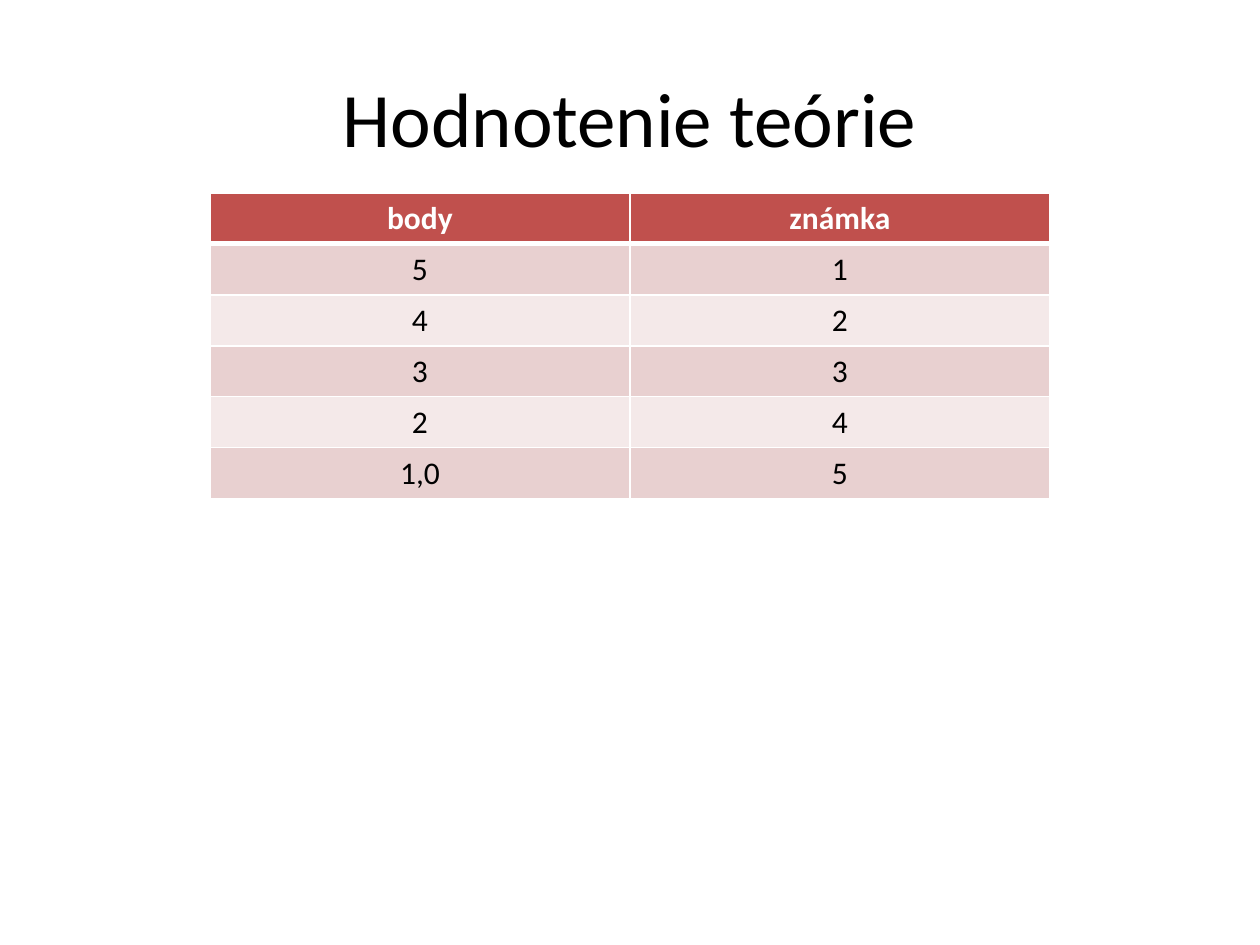
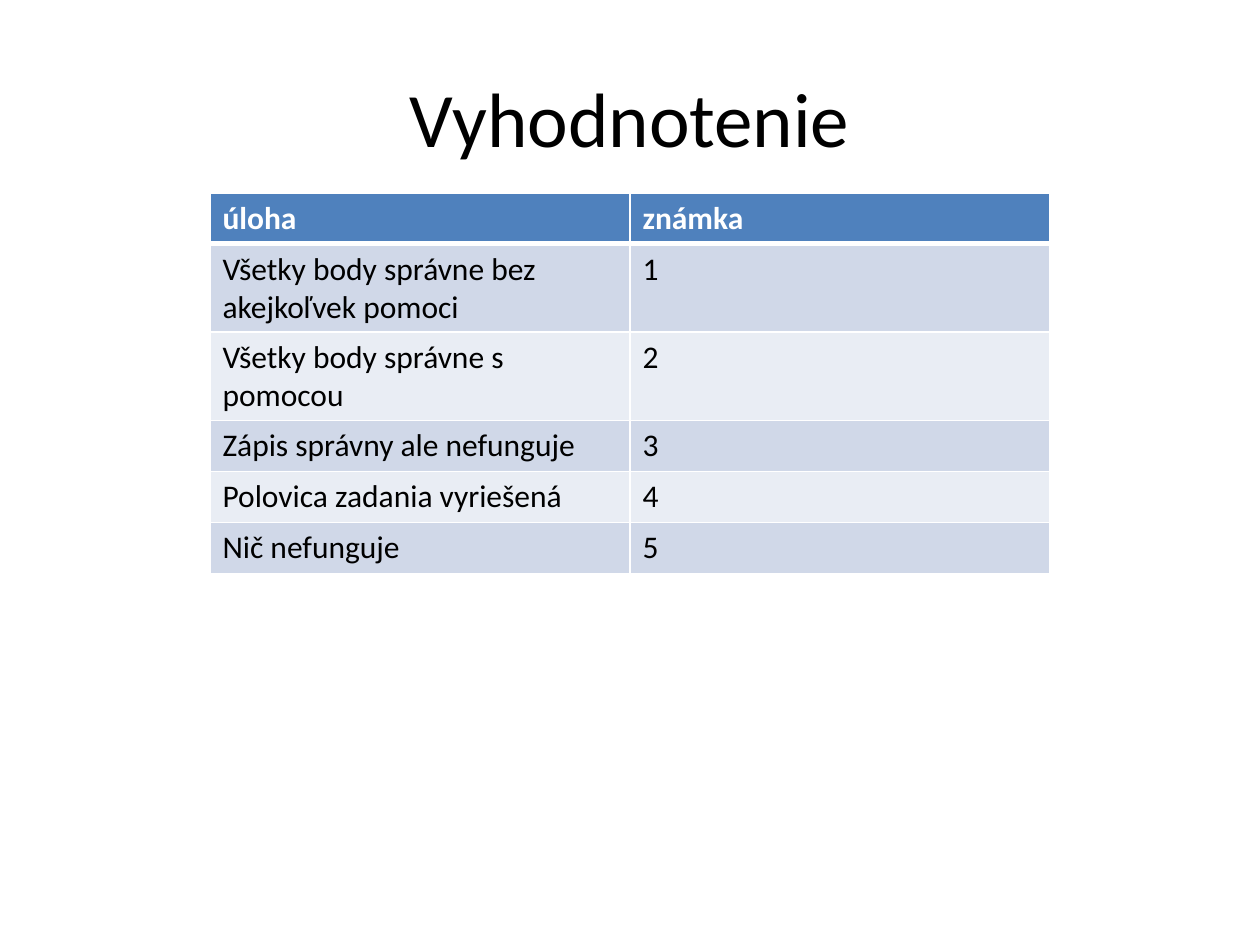
from lxml.etree import SubElement
from pptx import Presentation
from pptx.dml.color import RGBColor
from pptx.enum.text import MSO_ANCHOR, PP_ALIGN
from pptx.oxml import parse_xml
from pptx.oxml.ns import nsdecls
from pptx.util import Inches, Pt

FONT = "Calibri"
WHITE, BLACK = "FFFFFF", "000000"
ROW_H = Inches(0.405)

SLIDES = [
    {"title": "Hodnotenie teórie", "align": PP_ALIGN.CENTER,
     "header": "C0504D", "bands": ("E8D0D0", "F4E9E9"),
     "rows": [("body", "známka"), ("5", "1"), ("4", "2"), ("3", "3"),
              ("2", "4"), ("1,0", "5")]},
    {"title": "Vyhodnotenie", "align": PP_ALIGN.LEFT,
     "header": "4F81BD", "bands": ("D0D8E8", "E9EDF4"),
     "rows": [("úloha", "známka"),
              ("Všetky body správne bez akejkoľvek pomoci", "1"),
              ("Všetky body správne s pomocou", "2"),
              ("Zápis správny ale nefunguje", "3"),
              ("Polovica zadania vyriešená", "4"),
              ("Nič nefunguje", "5")]},
]


def style(p, size, color, align, bold=False):
    p.alignment = align
    for r in p.runs:
        r.font.name, r.font.size, r.font.bold = FONT, Pt(size), bold
        r.font.color.rgb = RGBColor.from_string(color)


def add_borders(cell, bottom):
    """White cell edges: 1 pt, with the given width below."""
    tcPr = cell._tc.get_or_add_tcPr()
    for i, (side, width) in enumerate((("L", 1), ("R", 1), ("T", 1), ("B", bottom))):
        tcPr.insert(i, parse_xml(
            f'<a:ln{side} {nsdecls("a")} w="{Pt(width)}"><a:solidFill>'
            f'<a:srgbClr val="{WHITE}"/></a:solidFill></a:ln{side}>'))


prs = Presentation()
prs.slide_width, prs.slide_height = Inches(10), Inches(7.5)
W, H = prs.slide_width, prs.slide_height

for data in SLIDES:
    s = prs.slides.add_slide(prs.slide_layouts[6])

    title = s.shapes.add_textbox(int(W * 0.05), int(H * 0.04), int(W * 0.9), Inches(1.25))
    tf = title.text_frame
    tf.word_wrap = True
    tf.vertical_anchor = MSO_ANCHOR.MIDDLE
    tf.text = data["title"]
    style(tf.paragraphs[0], 44, BLACK, PP_ALIGN.CENTER)

    rows = data["rows"]
    table = s.shapes.add_table(len(rows), 2, W // 6, Inches(1.53),
                               W * 2 // 3, ROW_H * len(rows)).table
    for i, row in enumerate(rows):
        is_header = i == 0
        fill = data["header"] if is_header else data["bands"][(i - 1) % 2]
        for j, text in enumerate(row):
            cell = table.cell(i, j)
            cell.text = text
            cell.fill.solid()
            cell.fill.fore_color.rgb = RGBColor.from_string(fill)
            add_borders(cell, 3 if is_header else 1)
            style(cell.text_frame.paragraphs[0], 18,
                  WHITE if is_header else BLACK, data["align"], is_header)

prs.save("out.pptx")
